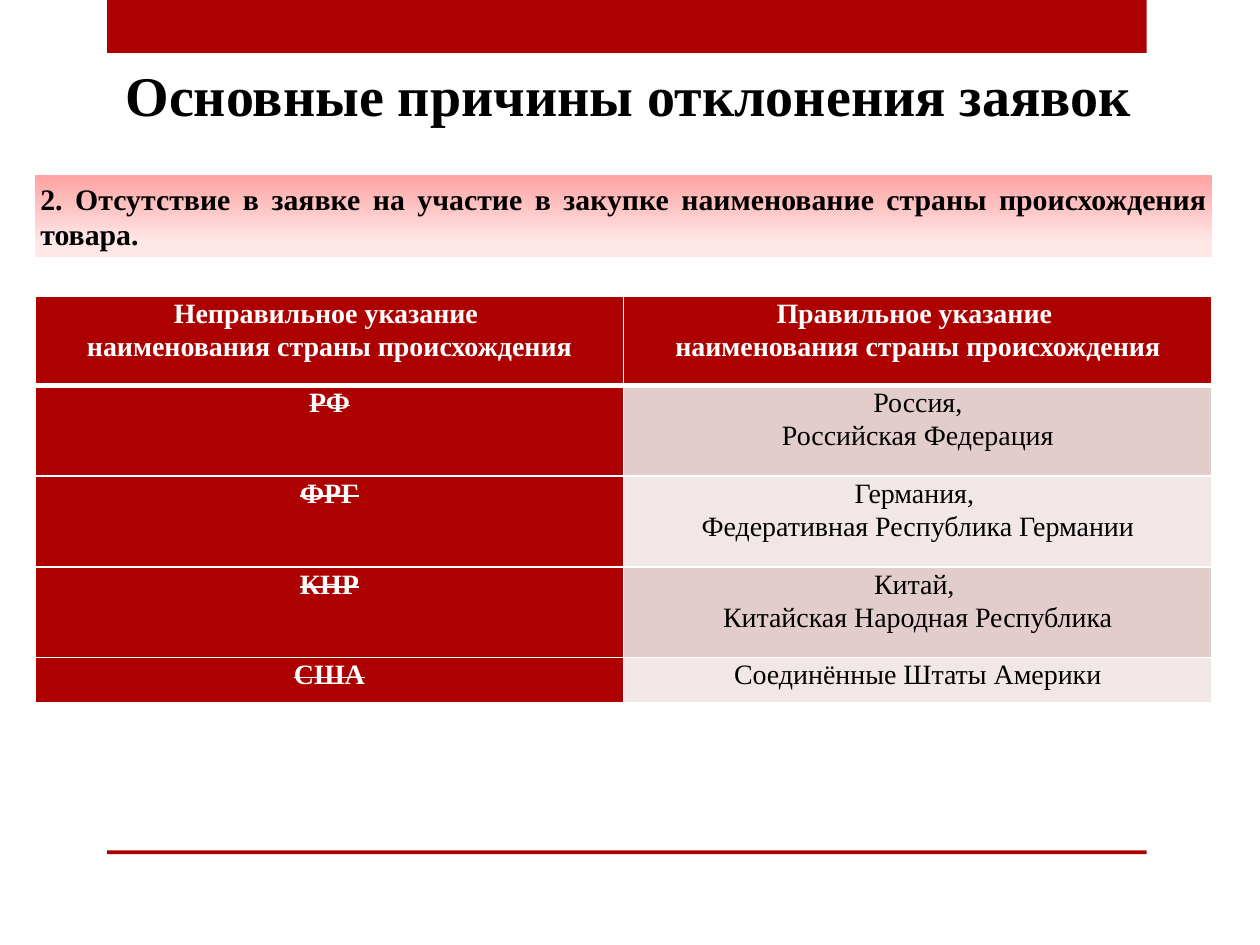
from copy import deepcopy
from lxml import etree
from pptx import Presentation
from pptx import util as u
from pptx.dml import color
from pptx.enum import shapes, text
from pptx.oxml import ns

COLORS = {
    "red": "AD0101", "white": "FFFFFF", "black": "000000",
    "band_dark": "E3CCCC", "band_light": "F1E7E7",
}
GRADIENT = [(0, "FFA3A3"), (0.82, "FFE7E7"), (1, "FFE4E4")]
INSET = u.Inches(0.04)


def rgb(name):
    return color.RGBColor.from_string(COLORS[name])


def write(frame, lines, size, ink="black", bold=True, strike=False,
          align=text.PP_ALIGN.CENTER, spacing=1.0):
    frame.word_wrap = True
    for index, line in enumerate(lines):
        para = frame.paragraphs[0] if index == 0 else frame.add_paragraph()
        para.alignment, para.line_spacing = align, spacing
        span = para.add_run()
        span.text = line
        style = {"name": "Times New Roman", "size": u.Pt(size), "bold": bold}
        for key, value in style.items():
            setattr(span.font, key, value)
        span.font.color.rgb = rgb(ink)
        if strike:
            span.font._element.set("strike", "sngStrike")


deck = Presentation()
deck.slide_width, deck.slide_height = u.Inches(10), u.Inches(7.5)
page = deck.slides.add_slide(deck.slide_layouts[5])

# Red bars at the top and the bottom
for top, height in [(0, 0.42), (6.75, 0.03)]:
    bar = page.shapes.add_shape(shapes.MSO_SHAPE.RECTANGLE, u.Inches(0.85),
                                u.Inches(top), u.Inches(8.25), u.Inches(height))
    bar.shadow.inherit = False
    bar.fill.solid()
    bar.fill.fore_color.rgb = rgb("red")
    bar.line.fill.background()

# Title
title = page.shapes.title
title.left, title.top = u.Inches(0.9), u.Inches(0.44)
title.width, title.height = u.Inches(8.18), u.Inches(0.62)
write(title.text_frame, ["Основные причины отклонения заявок"], 32)

# Reason with a gradient background
reason = page.shapes.add_shape(shapes.MSO_SHAPE.RECTANGLE, u.Inches(0.28),
                               u.Inches(1.39), u.Inches(9.34), u.Inches(0.65))
reason.shadow.inherit = False
reason.line.fill.background()
reason.fill.gradient()
reason.fill.gradient_angle = 270
stop_list = reason._element.spPr.find(ns.qn("a:gradFill")).find(ns.qn("a:gsLst"))
stop_list.append(deepcopy(stop_list[-1]))
for stop, (position, shade) in zip(reason.fill.gradient_stops, GRADIENT):
    stop.position = position
    stop.color.rgb = color.RGBColor.from_string(shade)
write(reason.text_frame,
      ["2. Отсутствие в заявке на участие в закупке наименование страны "
       "происхождения товара."], 17, align=text.PP_ALIGN.JUSTIFY)

for box in (title, reason):
    frame = box.text_frame
    frame.auto_size = text.MSO_AUTO_SIZE.NONE
    frame.vertical_anchor = text.MSO_ANCHOR.MIDDLE
    for side in ("left", "top", "right", "bottom"):
        setattr(frame, f"margin_{side}", INSET)

# Table of wrong and right country names
ROWS = [
    (0.71, ["Неправильное указание ", "наименования страны происхождения"],
     ["Правильное указание ", "наименования страны происхождения"]),
    (0.72, ["РФ"], ["Россия,", "Российская Федерация"]),
    (0.72, ["ФРГ"], ["Германия, ", "Федеративная Республика Германии"]),
    (0.72, ["КНР"], ["Китай, ", "Китайская Народная Республика"]),
    (0.36, ["США"], ["Соединённые Штаты Америки"]),
]
table = page.shapes.add_table(len(ROWS), 2, u.Inches(0.28), u.Inches(2.35),
                              u.Inches(9.34), u.Inches(3.23)).table
for column in table.columns:
    column.width = u.Inches(4.67)

for row, (height, *entries) in enumerate(ROWS):
    table.rows[row].height = u.Inches(height)
    for col, lines in enumerate(entries):
        cell = table.cell(row, col)
        cell.margin_left = cell.margin_right = u.Inches(0.07)
        cell.margin_top = cell.margin_bottom = 0

        # White borders, thicker below the header
        widths = {"lnL": 1, "lnR": 1, "lnT": 3 if row == 1 else 1,
                  "lnB": 3 if row == 0 else 1}
        for tag, width in widths.items():
            border = etree.SubElement(cell._tc.get_or_add_tcPr(),
                                      ns.qn(f"a:{tag}"), w=str(u.Pt(width)))
            paint = etree.SubElement(border, ns.qn("a:solidFill"))
            etree.SubElement(paint, ns.qn("a:srgbClr"), val=COLORS["white"])

        on_red = row == 0 or col == 0
        band = "band_dark" if row % 2 else "band_light"
        cell.fill.solid()
        cell.fill.fore_color.rgb = rgb("red" if on_red else band)
        write(cell.text_frame, lines, 16, ink="white" if on_red else "black",
              bold=on_red, strike=row > 0 and col == 0, spacing=1.07)

deck.save("out.pptx")
